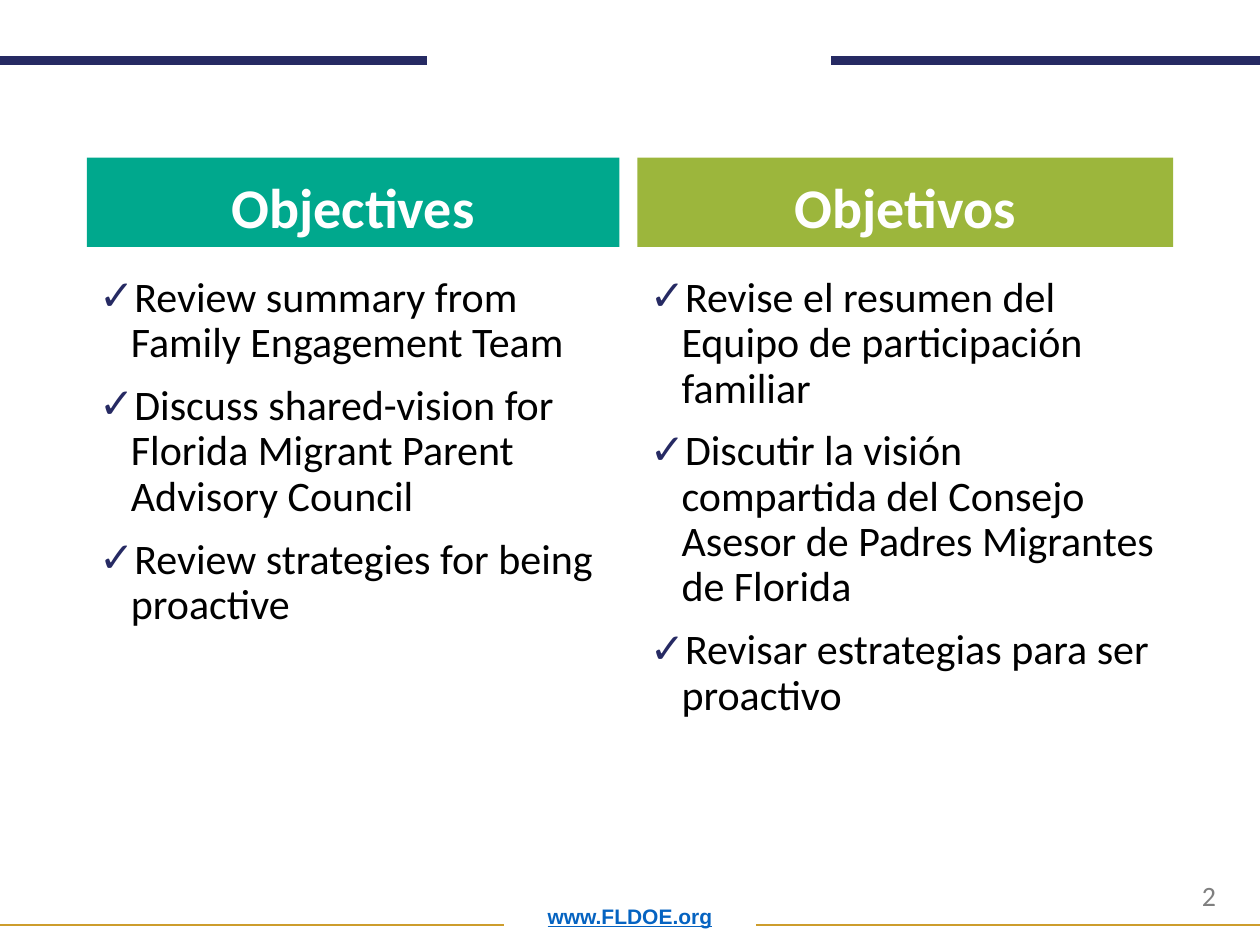
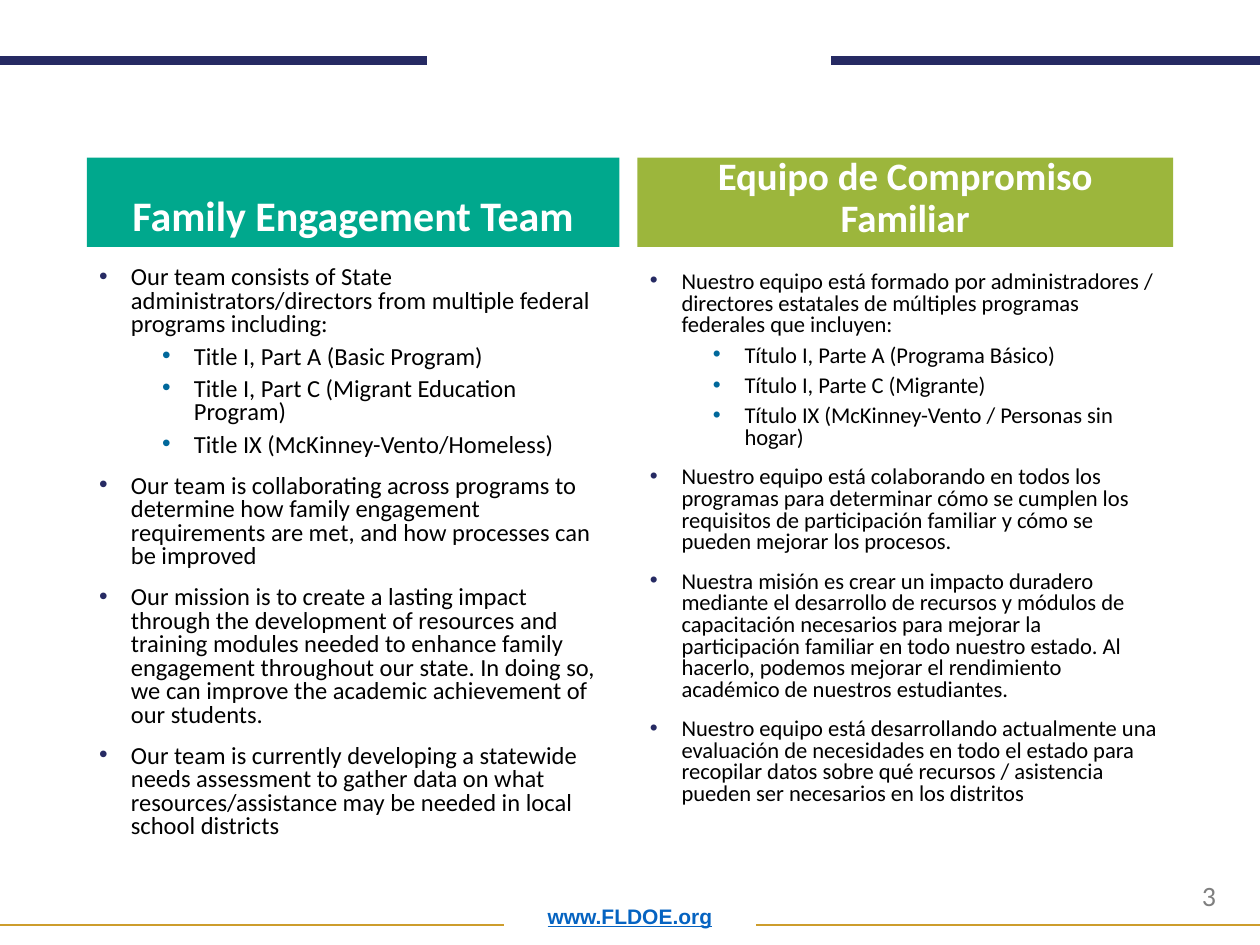
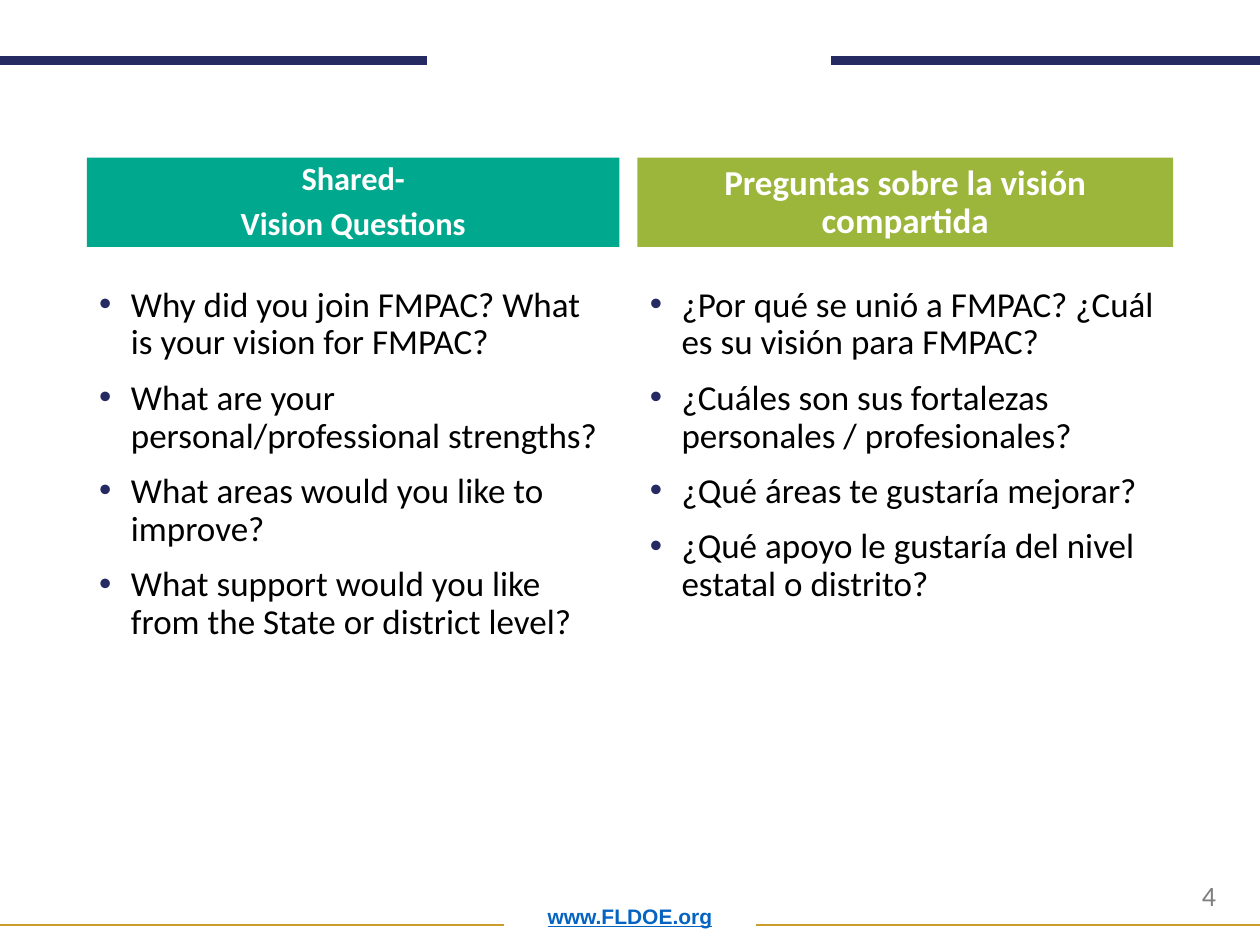
from dataclasses import dataclass
from typing import NamedTuple

from lxml.etree import SubElement
from pptx import Presentation
from pptx.dml.color import RGBColor
from pptx.enum.shapes import MSO_CONNECTOR, MSO_SHAPE
from pptx.enum.text import MSO_ANCHOR as Anchor, PP_ALIGN as Align
from pptx.oxml.ns import qn
from pptx.util import Cm, Pt

NAVY = RGBColor(0x26, 0x2A, 0x63)
GOLD = RGBColor(0xCD, 0x9D, 0x2C)
TEAL = RGBColor(0x00, 0xA8, 0x8D)
GREEN = RGBColor(0x9C, 0xB6, 0x3C)
BLUE = RGBColor(0x00, 0x68, 0x9B)
LINK_BLUE = RGBColor(0x05, 0x63, 0xC1)
GRAY = RGBColor(0x7F, 0x7F, 0x7F)
BLACK = RGBColor(0x00, 0x00, 0x00)
WHITE = RGBColor(0xFF, 0xFF, 0xFF)

SLIDE_WIDTH, SLIDE_HEIGHT = Cm(25.4), Cm(19.05)
MARGIN = Cm(1.75)
HEADING_TOP, HEADING_HEIGHT = Cm(3.18), Cm(1.8)
BODY_HEIGHT = Cm(12.14)
HANGING = Cm(0.64)
LEVEL_STEP = Cm(1.27)
LEVEL_COLORS = (NAVY, BLUE)
LEVEL_GAPS = (Pt(10), Pt(5))


class Rule(NamedTuple):
    start: Cm
    end: Cm
    y: Cm
    color: RGBColor
    weight: Pt


RULES = (
    Rule(Cm(0), Cm(8.61), Cm(1.22), NAVY, Pt(5)),
    Rule(Cm(16.76), SLIDE_WIDTH, Cm(1.22), NAVY, Pt(5)),
    Rule(Cm(0), Cm(10.16), Cm(18.64), GOLD, Pt(1)),
    Rule(Cm(15.24), SLIDE_WIDTH, Cm(18.64), GOLD, Pt(1)),
)


class Column(NamedTuple):
    left: Cm
    width: Cm
    color: RGBColor


COLUMNS = (Column(MARGIN, Cm(10.74), TEAL), Column(Cm(12.85), Cm(10.8), GREEN))


class Item(NamedTuple):
    text: str
    level: int = 0


@dataclass(frozen=True)
class Panel:
    """One language's heading and bulleted list."""
    heading: tuple[str, ...]
    heading_size: float
    items: tuple[Item, ...]
    body_size: float
    body_top: Cm
    heading_spacing: float = 0.9
    body_spacing: float = 0.9
    bullet: str = "•"


PAGES = (
    (
        Panel(("Objectives",), 32, (
            Item("Review summary from Family Engagement Team"),
            Item("Discuss shared-vision for Florida Migrant Parent Advisory Council"),
            Item("Review strategies for being proactive"),
        ), 24, Cm(5.44), bullet="✓"),
        Panel(("Objetivos",), 32, (
            Item("Revise el resumen del Equipo de participación familiar"),
            Item("Discutir la visión compartida del Consejo Asesor de Padres "
                 "Migrantes de Florida"),
            Item("Revisar estrategias para ser proactivo"),
        ), 24, Cm(5.44), bullet="✓"),
    ),
    (
        Panel(("Family Engagement Team",), 24, (
            Item("Our team consists of State administrators/directors from multiple "
                 "federal programs including:"),
            Item("Title I, Part A (Basic Program)", 1),
            Item("Title I, Part C (Migrant Education Program)", 1),
            Item("Title IX (McKinney-Vento/Homeless)", 1),
            Item("Our team is collaborating across programs to determine how family "
                 "engagement requirements are met, and how processes can be improved"),
            Item("Our mission is to create a lasting impact through the development of "
                 "resources and training modules needed to enhance family engagement "
                 "throughout our state. In doing so, we can improve the academic "
                 "achievement of our students."),
            Item("Our team is currently developing a statewide needs assessment to "
                 "gather data on what resources/assistance may be needed in local "
                 "school districts"),
        ), 14, Cm(5.26), body_spacing=0.8),
        Panel(("Equipo de Compromiso Familiar",), 22.2, (
            Item("Nuestro equipo está formado por administradores / directores "
                 "estatales de múltiples programas federales que incluyen:"),
            Item("Título I, Parte A (Programa Básico)", 1),
            Item("Título I, Parte C (Migrante)", 1),
            Item("Título IX (McKinney-Vento / Personas sin hogar)", 1),
            Item("Nuestro equipo está colaborando en todos los programas para "
                 "determinar cómo se cumplen los requisitos de participación familiar "
                 "y cómo se pueden mejorar los procesos."),
            Item("Nuestra misión es crear un impacto duradero mediante el desarrollo "
                 "de recursos y módulos de capacitación necesarios para mejorar la "
                 "participación familiar en todo nuestro estado. Al hacerlo, podemos "
                 "mejorar el rendimiento académico de nuestros estudiantes."),
            Item("Nuestro equipo está desarrollando actualmente una evaluación de "
                 "necesidades en todo el estado para recopilar datos sobre qué "
                 "recursos / asistencia pueden ser necesarios en los distritos"),
        ), 12.9, Cm(5.36), body_spacing=0.8),
    ),
    (
        Panel(("Shared-", "Vision Questions"), 18.5, (
            Item("Why did you join FMPAC? What is your vision for FMPAC?"),
            Item("What are your personal/professional strengths?"),
            Item("What areas would you like to improve?"),
            Item("What support would you like from the State or district level?"),
        ), 20, Cm(5.66), heading_spacing=0.7),
        Panel(("Preguntas sobre la visión compartida",), 20, (
            Item("¿Por qué se unió a FMPAC? ¿Cuál es su visión para FMPAC?"),
            Item("¿Cuáles son sus fortalezas personales / profesionales?"),
            Item("¿Qué áreas te gustaría mejorar?"),
            Item("¿Qué apoyo le gustaría del nivel estatal o distrito?"),
        ), 20, Cm(5.66)),
    ),
)


def add_run(paragraph, text: str, size: float, color: RGBColor,
            bold: bool = False, face: str = "Calibri"):
    run = paragraph.add_run()
    run.text = text
    font = run.font
    font.name, font.size, font.bold = face, Pt(size), bold
    font.color.rgb = color
    return run


def add_paragraph(frame, index: int):
    return frame.add_paragraph() if index else frame.paragraphs[0]


def add_text_frame(slide, left: Cm, top: Cm, width: Cm, height: Cm):
    frame = slide.shapes.add_textbox(left, top, width, height).text_frame
    frame.word_wrap = True
    return frame


def add_bullet(paragraph, mark: str, level: int) -> None:
    paragraph.level = level
    properties = paragraph._p.get_or_add_pPr()
    properties.set("marL", str(HANGING + level * LEVEL_STEP))
    properties.set("indent", str(-HANGING))
    color = SubElement(properties, qn("a:buClr"))
    SubElement(color, qn("a:srgbClr"), val=str(LEVEL_COLORS[level]))
    SubElement(properties, qn("a:buFont"), typeface="Arial")
    SubElement(properties, qn("a:buChar"), char=mark)


def add_rule(slide, rule: Rule) -> None:
    connector = slide.shapes.add_connector(
        MSO_CONNECTOR.STRAIGHT, rule.start, rule.y, rule.end, rule.y)
    connector.line.color.rgb = rule.color
    connector.line.width = rule.weight
    SubElement(connector._element.spPr, qn("a:effectLst"))


def add_page_frame(slide, number: int) -> None:
    """Draw the rules, web address and page number that every slide carries."""
    for rule in RULES:
        add_rule(slide, rule)
    footer = add_text_frame(slide, MARGIN, Cm(17.78), Cm(21.9), Cm(1.07))
    footer.vertical_anchor = Anchor.BOTTOM
    address = footer.paragraphs[0]
    address.alignment = Align.CENTER
    address.line_spacing = 0.9
    add_run(address, "www.FLDOE.org", 12, LINK_BLUE, True, "Arial").font.underline = True
    page = add_text_frame(slide, Cm(23.98), Cm(17.58), Cm(1.32), Cm(0.94))
    add_run(page.paragraphs[0], str(number), 16, GRAY)


def add_heading(slide, column: Column, panel: Panel) -> None:
    band = slide.shapes.add_shape(
        MSO_SHAPE.RECTANGLE, column.left, HEADING_TOP, column.width, HEADING_HEIGHT)
    band.shadow.inherit = False
    band.fill.solid()
    band.fill.fore_color.rgb = column.color
    band.line.fill.background()
    frame = band.text_frame
    frame.word_wrap = True
    frame.vertical_anchor = Anchor.BOTTOM
    for index, text in enumerate(panel.heading):
        paragraph = add_paragraph(frame, index)
        paragraph.alignment = Align.CENTER
        paragraph.line_spacing = panel.heading_spacing
        if index:
            paragraph.space_before = LEVEL_GAPS[0]
        add_run(paragraph, text, panel.heading_size, WHITE, True)


def add_body(slide, column: Column, panel: Panel) -> None:
    frame = add_text_frame(slide, column.left, panel.body_top, column.width, BODY_HEIGHT)
    for index, item in enumerate(panel.items):
        paragraph = add_paragraph(frame, index)
        add_bullet(paragraph, panel.bullet, item.level)
        paragraph.line_spacing = panel.body_spacing
        if index:
            paragraph.space_before = LEVEL_GAPS[item.level]
        add_run(paragraph, item.text, panel.body_size, BLACK)


def main() -> None:
    deck = Presentation()
    deck.slide_width, deck.slide_height = SLIDE_WIDTH, SLIDE_HEIGHT
    for number, panels in enumerate(PAGES, start=2):
        slide = deck.slides.add_slide(deck.slide_layouts[6])
        add_page_frame(slide, number)
        for column, panel in zip(COLUMNS, panels):
            add_heading(slide, column, panel)
            add_body(slide, column, panel)
    deck.save("out.pptx")


if __name__ == "__main__":
    main()
